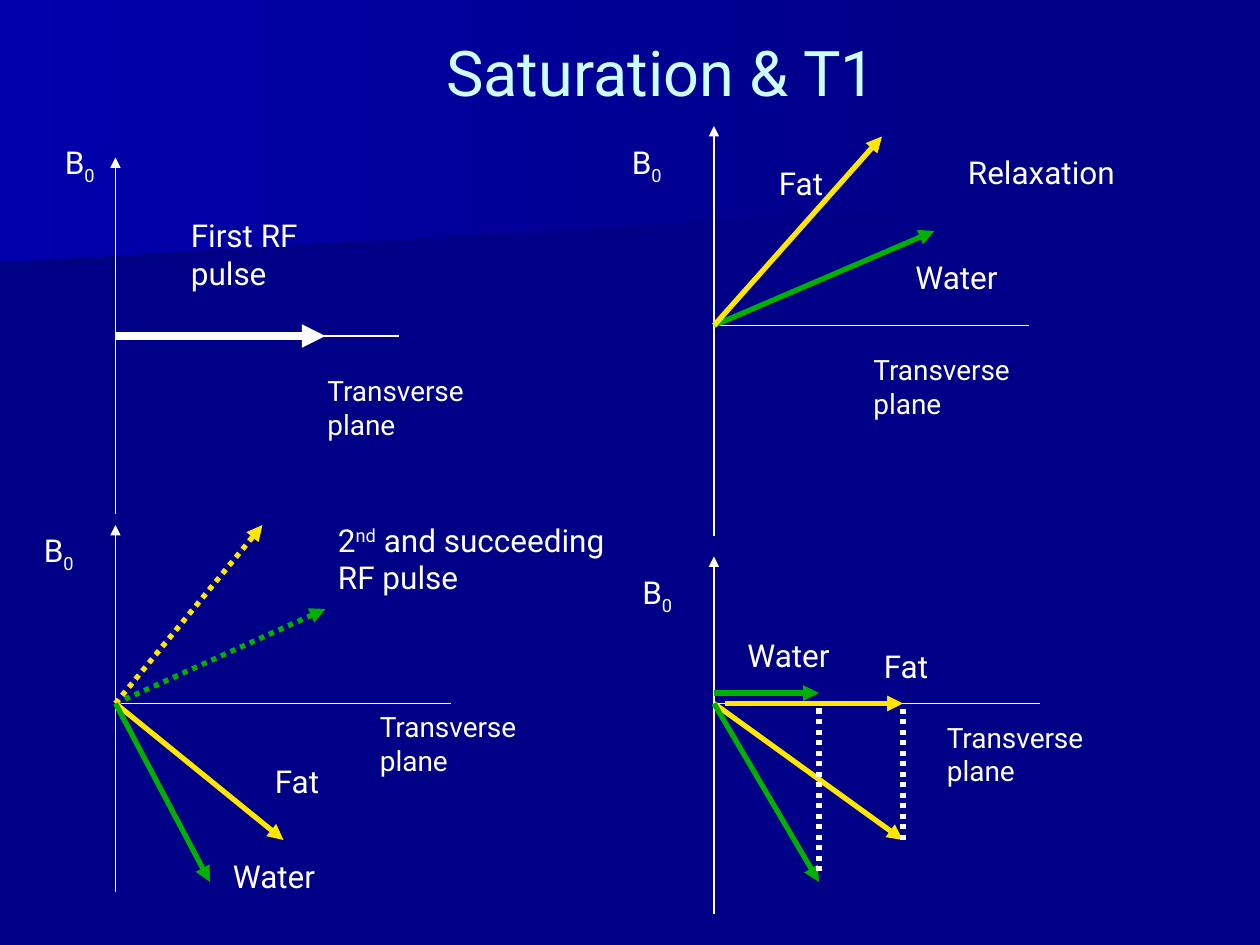
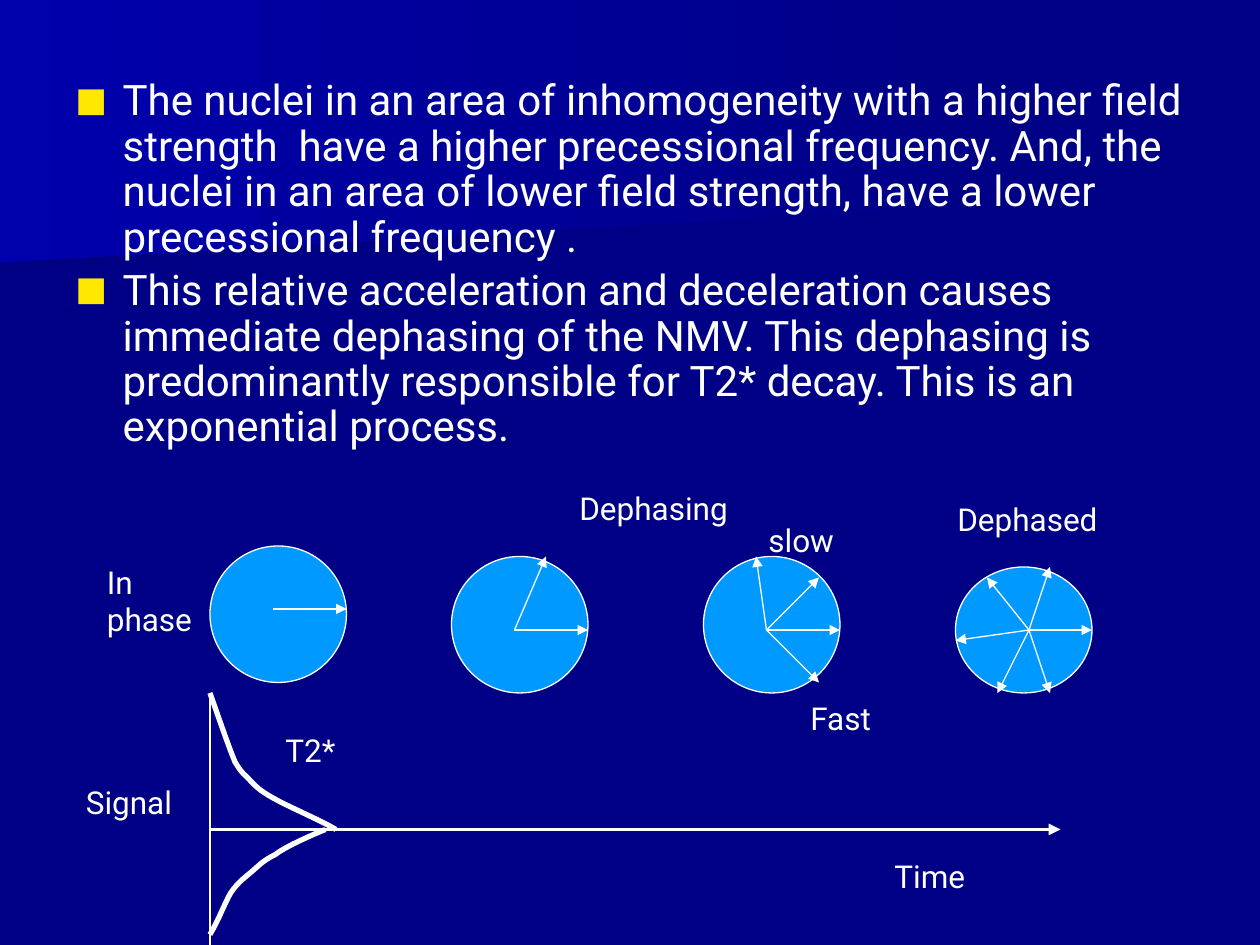
from dataclasses import dataclass
from typing import NamedTuple, Optional

from lxml import etree
from pptx import Presentation
from pptx import util as u
from pptx.dml.color import RGBColor
from pptx.enum import dml, shapes, text
from pptx.oxml import ns


@dataclass(frozen=True)
class Theme:
    font: str = "Roboto"
    background: str = "000086"
    lower_band: str = "000083"
    upper_band: str = "0000AC"
    title: str = "CCFFFF"
    white: str = "FFFFFF"
    fat: str = "FFE701"
    water: str = "00B000"
    disc: str = "0099FF"
    title_size: float = 36
    body_size: float = 24
    label_size: float = 18
    plane_size: float = 16
    thin: float = 0.75
    axis: float = 2.25
    bold: float = 3
    pulse: float = 4.5


THEME = Theme()
GRID_CM = 2.54 / 12


class Point(NamedTuple):
    x: float
    y: float


class Run(NamedTuple):
    text: str
    baseline: int = 0


@dataclass(frozen=True)
class Label:
    runs: tuple[Run, ...]
    left: float
    top: float
    width: float
    height: float = 4.8
    size: float = THEME.label_size
    wrap: bool = True


@dataclass(frozen=True)
class Vector:
    start: Point
    end: Point
    color: str = THEME.white
    width: float = THEME.bold
    dotted: bool = False
    arrow: bool = True


@dataclass(frozen=True)
class Diagram:
    origin: Point
    top: float
    bottom: float
    right: float
    vectors: tuple[Vector, ...]
    labels: tuple[Label, ...]


@dataclass(frozen=True)
class Disc:
    left: float
    top: float
    height: float
    center: Point
    tips: tuple[Point, ...]


def grid(steps: float) -> u.Length:
    return u.Cm(steps * GRID_CM)


def rgb(color: str) -> RGBColor:
    return RGBColor.from_string(color)


def plain(words: str, left: float, top: float, width: float, **options) -> Label:
    return Label((Run(words),), left, top, width, **options)


def field(left: float, top: float) -> Label:
    return Label((Run("B"), Run("0", -25)), left, top, 7)


def plane(left: float, top: float) -> Label:
    return plain("Transverse plane", left, top, 20, height=7.7, size=THEME.plane_size)


def write(slide, paragraphs, left: float, top: float, width: float, height: float, *,
          size: float = THEME.label_size, color: str = THEME.white, wrap: bool = True,
          align=text.PP_ALIGN.LEFT, anchor=text.MSO_ANCHOR.TOP,
          bullet: Optional[str] = None, line_spacing: Optional[float] = None,
          gap: float = 0) -> None:
    frame = slide.shapes.add_textbox(*map(grid, (left, top, width, height))).text_frame
    frame.word_wrap = wrap
    frame.vertical_anchor = anchor
    for index, runs in enumerate(paragraphs):
        paragraph = frame.add_paragraph() if index else frame.paragraphs[0]
        paragraph.alignment = align
        if line_spacing:
            paragraph.line_spacing = line_spacing
        if index:
            paragraph.space_before = u.Pt(gap)
        if bullet:
            add_bullet(paragraph, bullet)
        for part in runs:
            run = paragraph.add_run()
            run.text = part.text
            run.font.name = THEME.font
            run.font.size = u.Pt(size)
            run.font.color.rgb = rgb(color)
            if part.baseline:
                run.font._element.set("baseline", str(part.baseline * 1000))


def add_bullet(paragraph, mark: str) -> None:
    props = paragraph._p.get_or_add_pPr()
    props.set("marL", str(grid(4.5)))
    props.set("indent", str(-grid(4.5)))
    color = etree.SubElement(props, ns.qn("a:buClr"))
    etree.SubElement(color, ns.qn("a:srgbClr"), val=THEME.fat)
    etree.SubElement(props, ns.qn("a:buSzPct"), val="80000")
    etree.SubElement(props, ns.qn("a:buFont"), typeface=THEME.font)
    etree.SubElement(props, ns.qn("a:buChar"), char=mark)


def draw_label(slide, label: Label) -> None:
    write(slide, [label.runs], label.left, label.top, label.width, label.height,
          size=label.size, wrap=label.wrap)


def draw_vector(slide, vector: Vector) -> None:
    connector = slide.shapes.add_connector(
        shapes.MSO_CONNECTOR.STRAIGHT, *map(grid, (*vector.start, *vector.end)))
    line = connector.line
    line.color.rgb = rgb(vector.color)
    line.width = u.Pt(vector.width)
    if vector.dotted:
        line.dash_style = dml.MSO_LINE.ROUND_DOT
    if vector.arrow:
        etree.SubElement(line._get_or_add_ln(), ns.qn("a:tailEnd"), type="triangle")
    etree.SubElement(connector._element.spPr, ns.qn("a:effectLst"))


def draw_outline(slide, points: list[Point], closed: bool):
    corners = [(grid(x), grid(y)) for x, y in points]
    builder = slide.shapes.build_freeform(*corners[0])
    builder.add_line_segments(corners[1:], close=closed)
    outline = builder.convert_to_shape()
    outline.shadow.inherit = False
    return outline


def draw_band(slide, points: list[Point], color: str) -> None:
    band = draw_outline(slide, points, closed=True)
    band.line.fill.background()
    band.fill.gradient()
    band.fill.gradient_angle = 0
    for stop, shade in zip(band.fill.gradient_stops, (color, THEME.background)):
        stop.color.rgb = rgb(shade)


def bezier(a: Point, b: Point, c: Point, d: Point, steps: int = 8) -> list[Point]:
    def blend(t: float, w: float, x: float, y: float, z: float) -> float:
        s = 1 - t
        return s**3 * w + 3 * s * s * t * x + 3 * s * t * t * y + t**3 * z

    return [Point(*(blend(i / steps, *axis) for axis in zip(a, b, c, d)))
            for i in range(1, steps + 1)]


def draw_decay(slide, controls: list[Point]) -> None:
    points = controls[:1]
    for i in range(0, len(controls) - 1, 3):
        points = points + bezier(*controls[i:i + 4])
    curve = draw_outline(slide, points, closed=False)
    curve.fill.background()
    curve.line.color.rgb = rgb(THEME.white)
    curve.line.width = u.Pt(THEME.bold)


def draw_diagram(slide, diagram: Diagram) -> None:
    x, y = diagram.origin
    axes = (
        Vector(Point(x, diagram.bottom), Point(x, diagram.top), width=THEME.thin),
        Vector(diagram.origin, Point(diagram.right, y), width=THEME.thin, arrow=False),
    )
    for vector in axes + diagram.vectors:
        draw_vector(slide, vector)
    for label in diagram.labels:
        draw_label(slide, label)


def draw_disc(slide, disc: Disc) -> None:
    circle = slide.shapes.add_shape(
        shapes.MSO_SHAPE.OVAL, *map(grid, (disc.left, disc.top, 13, disc.height)))
    circle.shadow.inherit = False
    circle.fill.solid()
    circle.fill.fore_color.rgb = rgb(THEME.disc)
    circle.line.color.rgb = rgb(THEME.white)
    circle.line.width = u.Pt(THEME.thin)
    for tip in disc.tips:
        draw_vector(slide, Vector(disc.center, tip, width=THEME.thin))


def add_slide(deck):
    slide = deck.slides.add_slide(deck.slide_layouts[6])
    draw_band(slide, [Point(93.4, 18.4), Point(0, 26), Point(0, 12.1), Point(93.5, 12.1)],
              THEME.lower_band)
    draw_band(slide, [Point(95, 19.4), Point(0, 25), Point(0, 0), Point(95, 0)],
              THEME.upper_band)
    return slide


def build_saturation(deck) -> None:
    slide = add_slide(deck)
    write(slide, [[Run("Saturation & T1")]], 6, 3.6, 114, 6.4, size=THEME.title_size,
          color=THEME.title, align=text.PP_ALIGN.CENTER, anchor=text.MSO_ANCHOR.MIDDLE)
    first, relaxed = Point(11, 32), Point(68, 31)
    second, projected = Point(11, 67), Point(68, 67)
    water_tip, fat_tip = Point(78, 84), Point(86, 80)
    diagrams = (
        Diagram(first, 15, 49, 38,
                (Vector(first, Point(31, 32), width=THEME.pulse),),
                (field(5, 13), plain("First RF pulse", 17, 20, 13, height=8.4),
                 plane(30, 35))),
        Diagram(relaxed, 12, 51, 98,
                (Vector(relaxed, Point(89, 22), THEME.water),
                 Vector(relaxed, Point(84, 13), THEME.fat)),
                (field(59, 13), plane(82, 33), plain("Relaxation", 91, 14, 18),
                 plain("Water", 86, 24, 12), plain("Fat", 73, 15, 7))),
        Diagram(second, 50, 85, 43,
                (Vector(second, Point(31, 58), THEME.water, dotted=True),
                 Vector(second, Point(25, 50), THEME.fat, dotted=True),
                 Vector(second, Point(27, 80), THEME.fat),
                 Vector(second, Point(20, 84), THEME.water)),
                (field(3, 50), plain("Fat", 25, 72, 7), plain("Water", 21, 81, 12),
                 plane(35, 67),
                 Label((Run("2"), Run("nd", 30), Run(" and succeeding RF pulse")),
                       31, 49, 28, 8.4))),
        Diagram(projected, 53, 87, 99,
                (Vector(projected, fat_tip, THEME.fat),
                 Vector(projected, water_tip, THEME.water),
                 Vector(Point(78, 83), Point(78, 67), dotted=True, arrow=False),
                 Vector(fat_tip, Point(86, 67), dotted=True, arrow=False),
                 Vector(Point(69, 67), Point(86, 67), THEME.fat),
                 Vector(Point(68, 66), Point(78, 66), THEME.water)),
                (field(60, 54), plain("Water", 70, 60, 12), plain("Fat", 83, 61, 7),
                 plane(89, 68))),
    )
    for diagram in diagrams:
        draw_diagram(slide, diagram)


def build_dephasing(deck) -> None:
    slide = add_slide(deck)
    write(slide, [
        [Run("The nuclei in an area of inhomogeneity with a higher field strength  have a "
             "higher precessional frequency. And, the nuclei in an area of lower field "
             "strength, have a lower precessional frequency .")],
        [Run("This relative acceleration and deceleration causes immediate dephasing of the "
             "NMV. This dephasing is predominantly responsible for T2* decay. This is an "
             "exponential process.")],
    ], 6, 7, 108, 42, size=THEME.body_size, bullet="■", line_spacing=0.9, gap=4.8)
    discs = (
        Disc(20, 52, 13, Point(26, 58), (Point(33, 58),)),
        Disc(43, 53, 13, Point(49, 60), (Point(56, 60), Point(52, 53))),
        Disc(67, 53, 13, Point(73, 60),
             (Point(78, 65), Point(80, 60), Point(78, 55), Point(72, 53))),
        Disc(91, 54, 12, Point(98, 60),
             (Point(104, 60), Point(100, 66), Point(100, 54), Point(94, 55),
              Point(91, 61), Point(95, 66))),
    )
    for disc in discs:
        draw_disc(slide, disc)
    draw_vector(slide, Vector(Point(20, 79), Point(101, 79), width=THEME.axis))
    draw_vector(slide, Vector(Point(20, 90), Point(20, 66), width=THEME.thin, arrow=False))
    upper_decay = ((20, 66), (20.4, 67.1), (21.8, 71.2), (22.4, 72.6), (23.2, 73.9),
                   (23.3, 73.7), (23.8, 74.3), (24.4, 74.9), (24.6, 75.2), (26, 76),
                   (27.4, 76.8), (30.7, 78.2), (32, 79))
    lower_decay = ((20, 89), (20.9, 87.5), (21.4, 86), (22, 85), (22.7, 84),
                   (23.3, 83.6), (24, 83), (24.7, 82.4), (25, 82), (26.2, 81.4),
                   (27.2, 80.6), (30, 79.4), (31, 79))
    for decay in (upper_decay, lower_decay):
        draw_decay(slide, [Point(*pair) for pair in decay])
    for label in (
        plain("In phase", 9, 53, 11, height=8.4),
        plain("Dephasing", 54, 46, 19),
        plain("Dephased", 90, 47, 17),
        plain("Fast", 76, 66, 12),
        plain("slow", 72, 49, 9),
        plain("Signal", 7, 74, 12),
        plain("T2*", 26, 69, 7.5, wrap=False),
        plain("Time", 84, 81, 14),
    ):
        draw_label(slide, label)


def main() -> None:
    deck = Presentation()
    deck.slide_width, deck.slide_height = grid(120), grid(90)
    backdrop = deck.slide_master.background.fill
    backdrop.solid()
    backdrop.fore_color.rgb = rgb(THEME.background)
    build_saturation(deck)
    build_dephasing(deck)
    deck.save("out.pptx")


if __name__ == "__main__":
    main()
